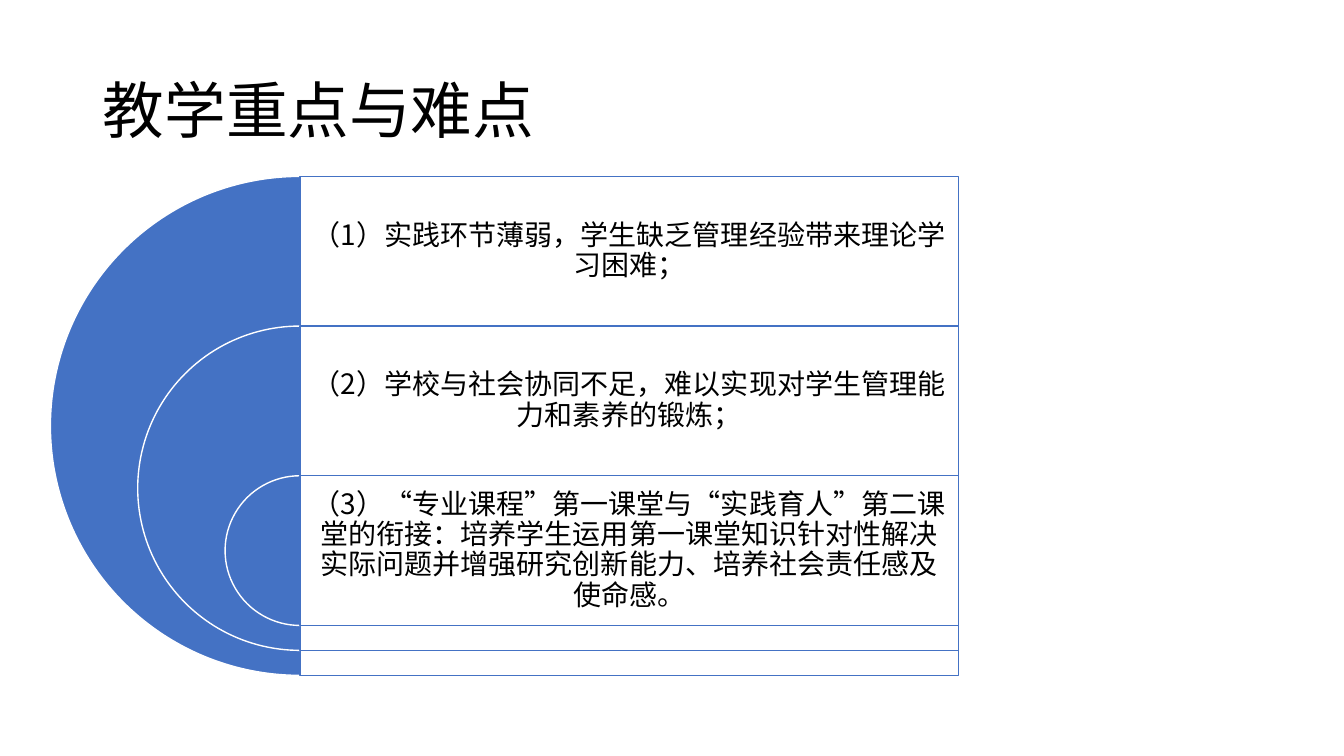
from dataclasses import dataclass

import pptx
import pptx.dml.color
import pptx.enum.shapes
import pptx.enum.text
import pptx.oxml
import pptx.oxml.ns
import pptx.shapes.autoshape
import pptx.slide
import pptx.text.text
import pptx.util
from lxml import etree
from pptx.util import Inches

COLORS = {"accent": "4472C4", "paper": "FFFFFF", "ink": "000000"}
FONT = "Noto Sans CJK SC"

# Nested half discs share a vertical axis; each ring starts one band lower.
AXIS = 2.975
TOP = 1.75
DIAMETER = 4.95
BAND = 0.3 * DIAMETER
SHRINK = 0.35 * DIAMETER
PANEL_WIDTH = 6.53


@dataclass
class Ring:
    top: float
    diameter: float
    point: str


POINTS = [
    "（1）实践环节薄弱，学生缺乏管理经验带来理论学习困难；",
    "（2）学校与社会协同不足，难以实现对学生管理能力和素养的锻炼；",
    "（3）“专业课程”第一课堂与“实践育人”第二课堂的衔接：培养学生运用第一课堂知识"
    "针对性解决实际问题并增强研究创新能力、培养社会责任感及使命感。",
]
RINGS = [
    Ring(TOP + level * BAND, DIAMETER - level * SHRINK, point)
    for level, point in enumerate(POINTS)
]


def rgb(name: str) -> pptx.dml.color.RGBColor:
    return pptx.dml.color.RGBColor.from_string(COLORS[name])


def write(
    frame: pptx.text.text.TextFrame,
    text: str,
    size: int,
    align: pptx.enum.text.PP_ALIGN,
) -> None:
    frame.text = text
    frame.word_wrap = True
    frame.vertical_anchor = pptx.enum.text.MSO_ANCHOR.MIDDLE
    paragraph = frame.paragraphs[0]
    paragraph.alignment = align
    paragraph.line_spacing = 0.9
    run = paragraph.runs[0]
    run.font.size = pptx.util.Pt(size)
    run.font.color.rgb = rgb("ink")
    run.font.name = FONT
    east_asian = etree.SubElement(run.font._element, pptx.oxml.ns.qn("a:ea"))
    east_asian.set("typeface", FONT)


def paint(shape: pptx.shapes.autoshape.Shape, fill: str, line: str) -> None:
    shape.shadow.inherit = False
    shape.fill.solid()
    shape.fill.fore_color.rgb = rgb(fill)
    shape.line.color.rgb = rgb(line)
    shape.line.width = pptx.util.Pt(1)


def set_opacity(shape: pptx.shapes.autoshape.Shape, percent: int) -> None:
    fill_color = shape._element.spPr.find(
        pptx.oxml.ns.qn("a:solidFill") + "/" + pptx.oxml.ns.qn("a:srgbClr")
    )
    alpha = etree.SubElement(fill_color, pptx.oxml.ns.qn("a:alpha"))
    alpha.set("val", str(percent * 1000))


def draw_ring(slide: pptx.slide.Slide, ring: Ring) -> None:
    """Draw a left half disc, its panel and the point at the panel's top."""
    top, diameter = Inches(ring.top), Inches(ring.diameter)
    half_disc = slide.shapes.add_shape(
        pptx.enum.shapes.MSO_SHAPE.PIE,
        Inches(AXIS - ring.diameter / 2), top, diameter, diameter,
    )
    # Angles of 90 and 270 degrees, in units of 100000/60000 degree.
    half_disc.adjustments[0] = 54
    half_disc.adjustments[1] = 162
    paint(half_disc, "accent", "paper")

    panel = slide.shapes.add_shape(
        pptx.enum.shapes.MSO_SHAPE.RECTANGLE,
        Inches(AXIS), top, Inches(PANEL_WIDTH), diameter,
    )
    paint(panel, "paper", "accent")
    set_opacity(panel, 90)

    label = slide.shapes.add_textbox(
        Inches(AXIS), top, Inches(PANEL_WIDTH), Inches(BAND)
    )
    frame = label.text_frame
    frame.margin_left = frame.margin_right = Inches(0.08)
    frame.margin_top = frame.margin_bottom = Inches(0.08)
    write(frame, ring.point, 20, pptx.enum.text.PP_ALIGN.CENTER)


def main() -> None:
    deck = pptx.Presentation()
    deck.slide_width, deck.slide_height = Inches(13.33), Inches(7.5)
    slide = deck.slides.add_slide(deck.slide_layouts.get_by_name("Title Only"))

    title = slide.shapes.title
    title.left, title.top = Inches(0.92), Inches(0.4)
    title.width, title.height = Inches(11.5), Inches(1.45)
    write(title.text_frame, "教学重点与难点", 44, pptx.enum.text.PP_ALIGN.LEFT)

    for ring in RINGS:
        draw_ring(slide, ring)
    deck.save("out.pptx")


if __name__ == "__main__":
    main()
